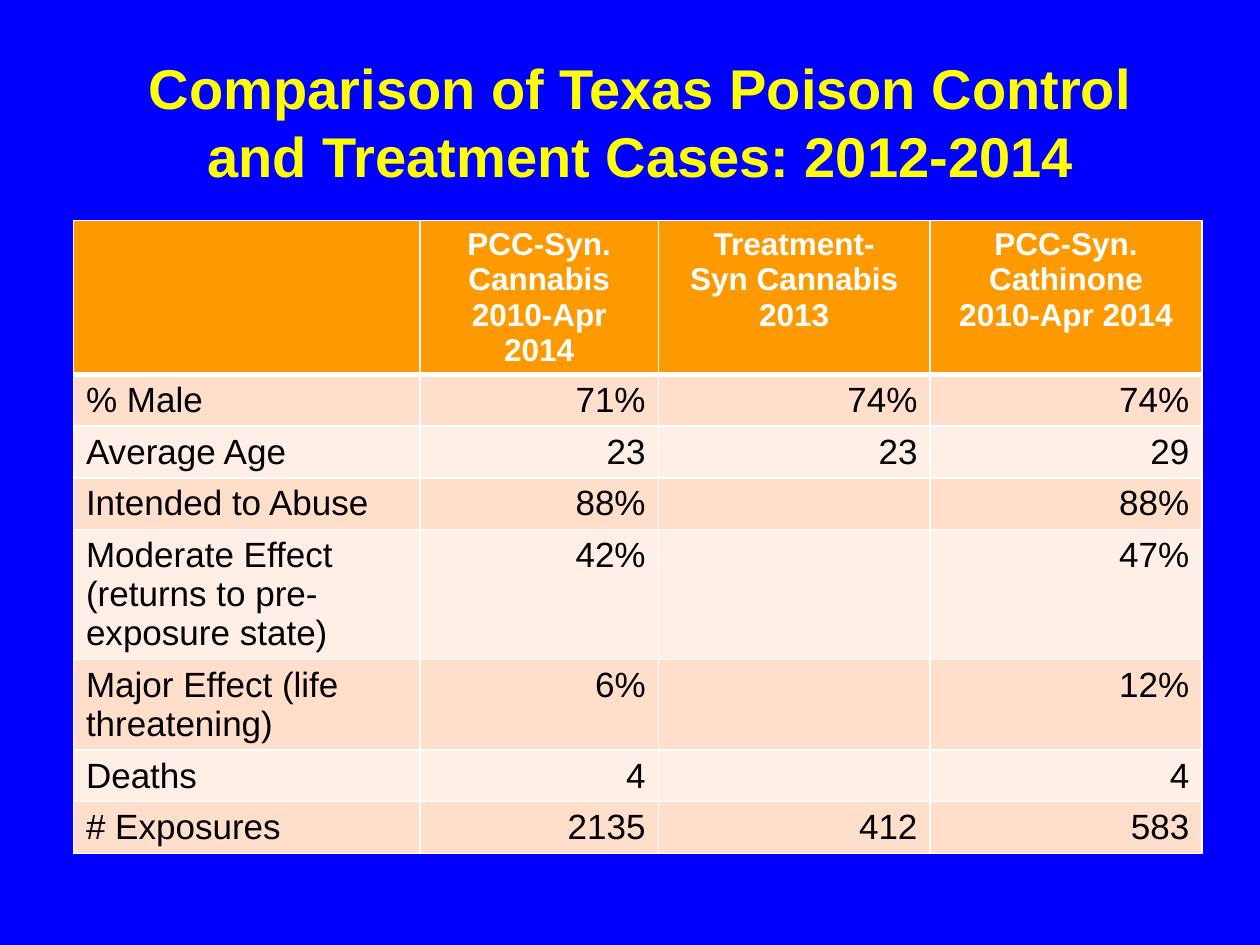
import pptx
import pptx.dml.color
import pptx.enum.text
import pptx.oxml
import pptx.oxml.ns
import pptx.util
from pptx.util import Cm

COLORS = {
    "background": "0000FF",
    "title": "FFFF00",
    "header": "FF9900",
    "header_text": "FFFFFF",
    "band_dark": "FFDECC",
    "band_light": "FFEFE7",
    "text": "000000",
    "border": "FFFFFF",
}
ALIGN = pptx.enum.text.PP_ALIGN

HEADER = [
    "",
    "PCC-Syn. Cannabis\n2010-Apr 2014",
    "Treatment-\nSyn Cannabis\n2013",
    "PCC-Syn. Cathinone\n2010-Apr 2014",
]
CASES = [
    ["% Male", "71%", "74%", "74%"],
    ["Average Age", "23", "23", "29"],
    ["Intended to Abuse", "88%", "", "88%"],
    ["Moderate Effect (returns to pre-exposure state)", "42%", "", "47%"],
    ["Major Effect (life threatening)", "6%", "", "12%"],
    ["Deaths", "4", "", "4"],
    ["# Exposures", "2135", "412", "583"],
]


def rgb(name):
    return pptx.dml.color.RGBColor.from_string(COLORS[name])


class SlideBuilder:
    """Holds the font and the current slide, and adds elements to it."""

    def __init__(self, prs, font="Arial"):
        self.font = font
        self.s = prs.slides.add_slide(prs.slide_layouts[5])
        fill = self.s.background.fill
        fill.solid()
        fill.fore_color.rgb = rgb("background")

    def style(self, tf, size, color, bold, align):
        for p in tf.paragraphs:
            p.alignment = align
            for r in p.runs:
                r.font.name = self.font
                r.font.size = pptx.util.Pt(size)
                r.font.bold = bold
                r.font.color.rgb = rgb(color)

    def title(self, text, left, top, width, height):
        sp = self.s.shapes.title
        sp.left, sp.top, sp.width, sp.height = left, top, width, height
        tf = sp.text_frame
        tf.text = text
        tf.word_wrap = True
        tf.auto_size = pptx.enum.text.MSO_AUTO_SIZE.NONE
        tf.vertical_anchor = pptx.enum.text.MSO_ANCHOR.MIDDLE
        self.style(tf, 32, "title", True, ALIGN.CENTER)

    def borders(self, cell, bottom):
        """Draw 1 pt borders, with the bottom one as wide as given in points."""
        tc_pr = cell._tc.get_or_add_tcPr()
        widths = {"lnL": 1, "lnR": 1, "lnT": 1, "lnB": bottom}
        for i, (tag, width) in enumerate(widths.items()):
            line = pptx.oxml.parse_xml(
                f'<a:{tag} {pptx.oxml.ns.nsdecls("a")} w="{pptx.util.Pt(width)}">'
                f'<a:solidFill><a:srgbClr val="{COLORS["border"]}"/></a:solidFill>'
                f"</a:{tag}>"
            )
            tc_pr.insert(i, line)

    def cell(self, cell, text, row, col):
        cell.text_frame.text = text
        if row == 0:
            fill = "header"
            self.style(cell.text_frame, 18, "header_text", True, ALIGN.CENTER)
        else:
            fill = "band_dark" if row % 2 else "band_light"
            align = ALIGN.RIGHT if col else ALIGN.LEFT
            self.style(cell.text_frame, 20, "text", False, align)
        cell.fill.solid()
        cell.fill.fore_color.rgb = rgb(fill)
        # The rule under the header is shared with the top of the first body row.
        self.borders(cell, 3 if row == 0 else 1)
        if row == 1:
            top = cell._tc.tcPr.find(pptx.oxml.ns.qn("a:lnT"))
            top.set("w", str(pptx.util.Pt(3)))

    def table(self, rows, left, top, col_widths, row_height):
        frame = self.s.shapes.add_table(
            len(rows), len(col_widths), left, top,
            sum(col_widths), row_height * len(rows))
        table = frame.table
        for column, width in zip(table.columns, col_widths):
            column.width = width
        for i, values in enumerate(rows):
            table.rows[i].height = row_height
            for j, text in enumerate(values):
                self.cell(table.cell(i, j), text, i, j)
        return frame


def main():
    prs = pptx.Presentation()
    prs.slide_width, prs.slide_height = Cm(25.4), Cm(19.05)
    slide = SlideBuilder(prs)
    slide.title("Comparison of Texas Poison Control and Treatment Cases: 2012-2014",
                Cm(2.12), Cm(0.85), Cm(21.59), Cm(3.18))
    frame = slide.table([HEADER] + CASES, Cm(1.48), Cm(4.45),
                        [Cm(6.99), Cm(4.8), Cm(5.48), Cm(5.48)], Cm(1.04))
    frame.height = Cm(13.54)
    prs.save("out.pptx")


if __name__ == "__main__":
    main()
